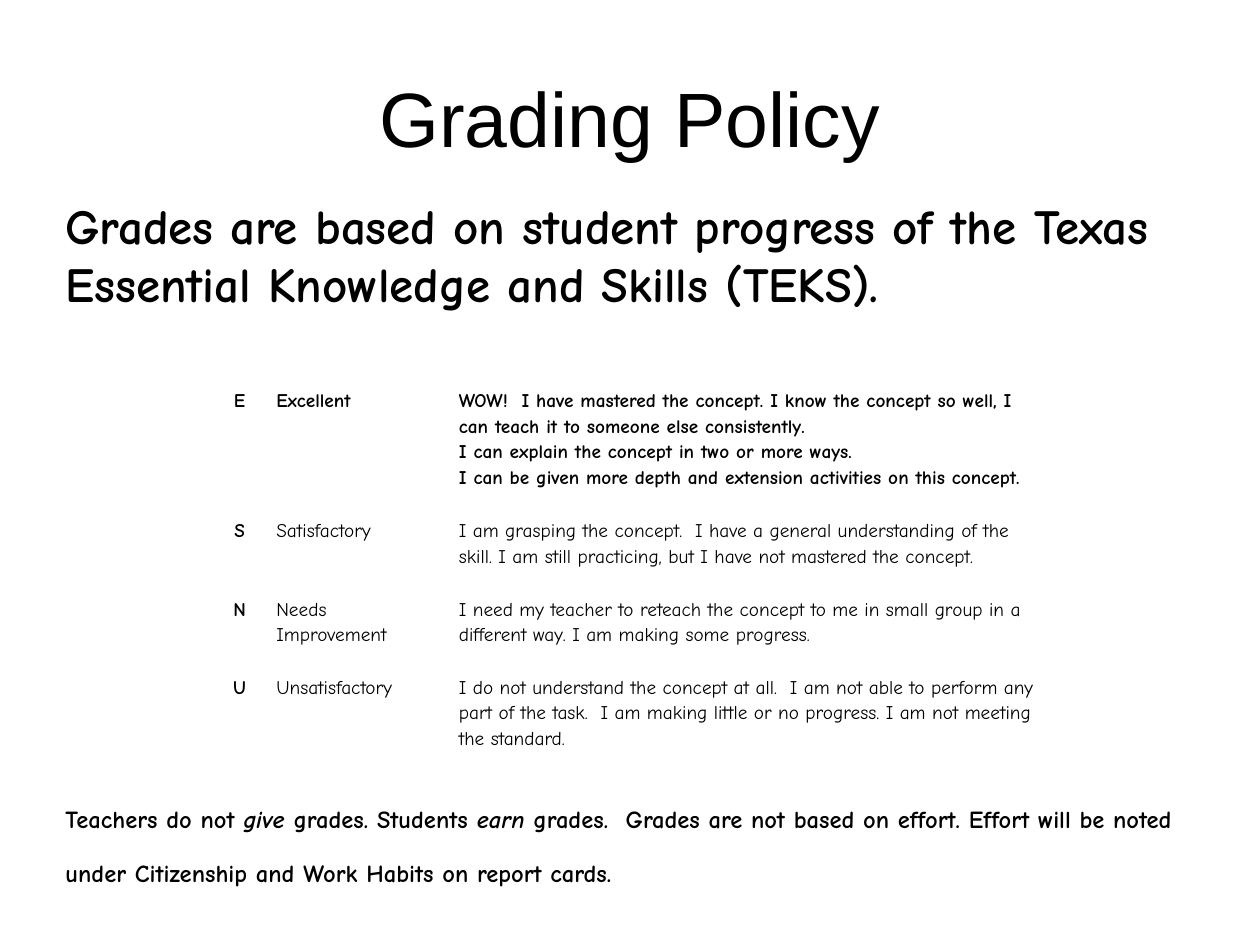
from lxml import etree
from pptx import Presentation
from pptx import util as u
from pptx.dml.color import RGBColor
from pptx.enum import text
from pptx.oxml.ns import qn

# Content
TITLE = "Grading Policy"
BASIS = [("Grades are based on student progress of the Texas Essential "
          "Knowledge and Skills (TEKS).", False)]
GRADES = [
    ("E", "Excellent", [
        "WOW!  I have mastered the concept. I know the concept so well, "
        "I can teach it to someone else consistently.",
        "I can explain the concept in two or more ways.",
        "I can be given more depth and extension activities on this concept."]),
    ("S", "Satisfactory", [
        "I am grasping the concept.  I have a general understanding of the "
        "skill. I am still practicing, but I have not mastered the concept."]),
    ("N", "Needs Improvement", [
        "I need my teacher to reteach the concept to me in small group in a "
        "different way. I am making some progress."]),
    ("U", "Unsatisfactory", [
        "I do not understand the concept at all.  I am not able to perform any "
        "part of the task.  I am making little or no progress. "
        "I am not meeting the standard."]),
]
# (wording, italic)
EFFORT = [
    ("Teachers do not ", False), ("give", True),
    (" grades. Students ", False), ("earn ", True),
    ("grades.  Grades are not based on effort. Effort will be noted under "
     "Citizenship and Work Habits on report cards.", False),
]

THEME = {
    "title_font": "Arial", "body_font": "Comic Neue",
    "ink": RGBColor(0, 0, 0), "paper": RGBColor(255, 255, 255),
    "title": u.Pt(44), "lead": u.Pt(28), "note": u.Pt(14), "cell": u.Pt(11),
}
COLUMN_WIDTHS = (1.12, 3.68, 12.09)
ROW_HEIGHTS = (2.62, 1.58, 1.58, 2.25)


def place(shape, left, top, width, height):
    shape.left, shape.top = u.Cm(left), u.Cm(top)
    shape.width, shape.height = u.Cm(width), u.Cm(height)


def style(paragraph, size, bold=False, font="body_font"):
    face = paragraph.font
    face.name, face.size, face.bold = THEME[font], THEME[size], bold
    face.color.rgb = THEME["ink"]


def add_statement(slide, runs, size, box):
    statement = slide.shapes.add_textbox(*map(u.Cm, box))
    frame = statement.text_frame
    frame.word_wrap = True
    frame.auto_size = text.MSO_AUTO_SIZE.SHAPE_TO_FIT_TEXT
    paragraph = frame.paragraphs[0]
    style(paragraph, size, bold=True)
    for wording, italic in runs:
        run = paragraph.add_run()
        run.text = wording
        if italic:
            run.font.italic = True
    return paragraph


def set_borders(cell, bottom):
    properties = cell._tc.get_or_add_tcPr()
    sides = (("a:lnL", 1), ("a:lnR", 1), ("a:lnT", 1), ("a:lnB", bottom))
    for index, (side, points) in enumerate(sides):
        line = etree.Element(qn(side), w=str(u.Pt(points)))
        fill = etree.SubElement(line, qn("a:solidFill"))
        etree.SubElement(fill, qn("a:srgbClr"), val=str(THEME["paper"]))
        properties.insert(index, line)


def fill_cell(cell, lines, bold, centred, bottom):
    cell.margin_left = cell.margin_right = u.Cm(0.18)
    cell.margin_top = cell.margin_bottom = 0
    cell.fill.solid()
    cell.fill.fore_color.rgb = THEME["paper"]
    set_borders(cell, bottom)
    cell.text_frame.text = "\n".join(lines)
    for paragraph in cell.text_frame.paragraphs:
        style(paragraph, "cell", bold)
        paragraph.line_spacing = 1.15
        paragraph.alignment = text.PP_ALIGN.CENTER if centred else text.PP_ALIGN.LEFT


def add_grade_table(slide):
    table = slide.shapes.add_table(
        len(GRADES), len(COLUMN_WIDTHS), u.Cm(4.27), u.Cm(7.8),
        u.Cm(sum(COLUMN_WIDTHS)), u.Cm(sum(ROW_HEIGHTS))).table
    table.horz_banding = False
    for column, width in zip(table.columns, COLUMN_WIDTHS):
        column.width = u.Cm(width)
    for r, (letter, level, meaning) in enumerate(GRADES):
        table.rows[r].height = u.Cm(ROW_HEIGHTS[r])
        for c, lines in enumerate(([letter], [level], meaning)):
            fill_cell(table.cell(r, c), lines, bold=r == 0 or c == 0,
                      centred=c == 0, bottom=3 if r == 0 else 1)


def main():
    deck = Presentation()
    deck.slide_width, deck.slide_height = u.Cm(25.4), u.Cm(19.05)
    slide = deck.slides.add_slide(deck.slide_layouts[5])

    # Title
    title = slide.shapes.title
    place(title, 1.27, 0.76, 22.86, 3.18)
    title.text_frame.text = TITLE
    title.text_frame.vertical_anchor = text.MSO_ANCHOR.MIDDLE
    heading = title.text_frame.paragraphs[0]
    heading.alignment = text.PP_ALIGN.CENTER
    style(heading, "title", font="title_font")

    # Grade scale
    add_grade_table(slide)

    # Statements above and below the scale
    add_statement(slide, BASIS, "lead", (1.07, 3.81, 22.86, 2.64))
    effort = add_statement(slide, EFFORT, "note", (1.07, 16.08, 23.93, 2.06))
    # A closing tab in the lead size makes the last line taller
    closing = effort.add_run()
    closing.text = "\t"
    closing.font.size = THEME["lead"]

    deck.save("out.pptx")


if __name__ == "__main__":
    main()
